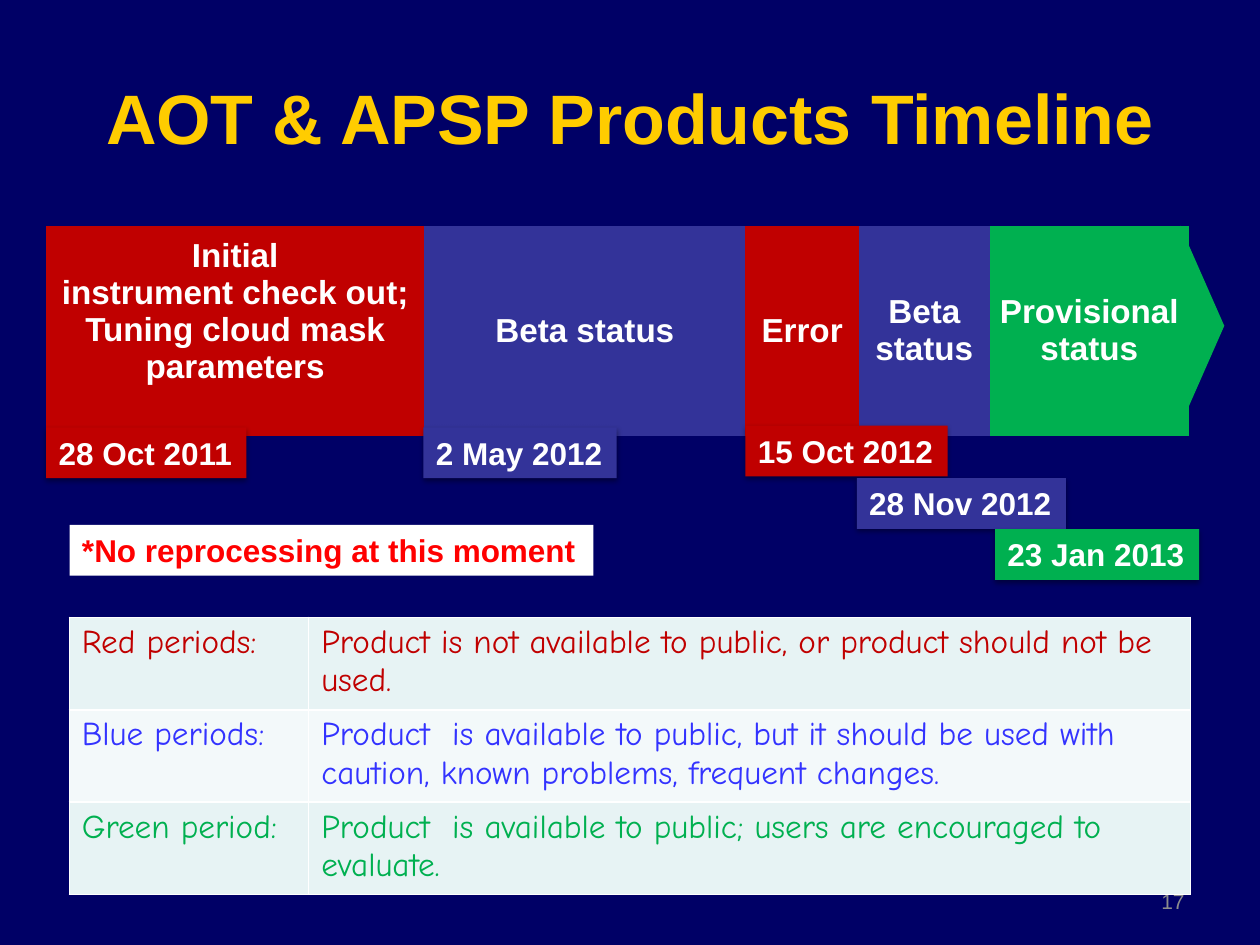
"""Builds the products timeline slide."""
from dataclasses import dataclass

from lxml.etree import SubElement
from pptx import Presentation
from pptx.dml.color import RGBColor
from pptx.enum.shapes import MSO_SHAPE
from pptx.enum.text import MSO_ANCHOR, PP_ALIGN
from pptx.oxml.ns import qn
from pptx.util import Pt


@dataclass(frozen=True)
class Theme:
    """Colours, fonts and type sizes of the slide."""
    navy: str = "000066"
    gold: str = "FFCC00"
    white: str = "FFFFFF"
    grey: str = "8C8C8C"
    red: str = "C00000"
    bright_red: str = "FF0000"
    indigo: str = "333399"
    blue: str = "3333FF"
    green: str = "00B050"
    tint: str = "E7F3F4"
    pale_tint: str = "F3F9FA"
    sans: str = "Arial"
    hand: str = "Comic Neue"
    title: int = 40
    body: int = 19
    label: int = 18
    number: int = 12


@dataclass(frozen=True)
class Box:
    """A region of the page, in points."""
    left: float
    top: float
    width: float
    height: float

    def lengths(self):
        """Return left, top, width and height as lengths."""
        return [Pt(value) for value in (self.left, self.top, self.width, self.height)]


@dataclass(frozen=True)
class Period:
    """One span of the timeline, with its date flag placed from the bar's corner."""
    text: str
    width: float
    fill: str
    date: str
    flag_left: float
    flag_top: float
    flag_width: float


THEME = Theme()
FLAG_HEIGHT = 29
PERIODS = [
    Period("Initial\ninstrument check out;\nTuning cloud mask parameters", 216, THEME.red,
           "28 Oct 2011", 0, 115.2, 114.5),
    Period("Beta status", 183.6, THEME.indigo, "2 May 2012", 215.6, 115.2, 110.4),
    Period("Error", 64.8, THEME.red, "15 Oct 2012", 399.6, 114.2, 115.5),
    Period("Beta status", 74.8, THEME.indigo, "28 Nov 2012", 463.2, 144.2, 119.5),
    Period("Provisional status", 113.8, THEME.green, "23 Jan 2013", 542.2, 173.4, 116.6),
]
LEGEND = [
    ("Red periods:", "Product is not available to public, or product should not be used.",
     THEME.red, THEME.tint),
    ("Blue periods:", "Product  is available to public, but it should be used with caution, "
     "known problems, frequent changes.", THEME.blue, THEME.pale_tint),
    ("Green period:", "Product  is available to public; users are encouraged to evaluate.",
     THEME.green, THEME.tint),
]


def paint(target, colour):
    """Fill a shape, cell or background with one colour."""
    target.fill.solid()
    target.fill.fore_color.rgb = RGBColor.from_string(colour)


def write(frame, text, size, colour, bold=True, align=PP_ALIGN.LEFT, font=THEME.sans):
    """Write the text, one paragraph a line, in a single style."""
    frame.text = text
    for para in frame.paragraphs:
        para.alignment = align
        para.font.name = font
        para.font.size = Pt(size)
        para.font.bold = bold
        para.font.color.rgb = RGBColor.from_string(colour)


def add_text(page, box, text, size, colour, bold, align):
    """Add a wrapped, vertically centred text box."""
    frame = page.shapes.add_textbox(*box.lengths()).text_frame
    frame.word_wrap = True
    frame.vertical_anchor = MSO_ANCHOR.MIDDLE
    write(frame, text, size, colour, bold, align)


def add_shape(page, kind, box, fill):
    """Add a plain filled shape without outline or shadow."""
    shape = page.shapes.add_shape(kind, *box.lengths())
    shape.shadow.inherit = False
    shape.line.fill.background()
    paint(shape, fill)
    return shape


def add_label(page, box, text, fill, colour):
    """Add a filled label holding one line of bold text."""
    label = add_shape(page, MSO_SHAPE.RECTANGLE, box, fill)
    label.text_frame.word_wrap = False
    label.text_frame.vertical_anchor = MSO_ANCHOR.TOP
    write(label.text_frame, text, THEME.label, colour)
    return label


def add_shadow(shape):
    """Give the shape a soft shadow below it."""
    effects = shape._element.spPr.find(qn("a:effectLst"))
    shadow = SubElement(effects, qn("a:outerShdw"), blurRad=str(Pt(3.1)),
                        dist=str(Pt(1.6)), dir="5400000", rotWithShape="0")
    colour = SubElement(shadow, qn("a:srgbClr"), val="000000")
    SubElement(colour, qn("a:alpha"), val="38000")


def add_grid(page, box, rows, widths):
    """Add an unstyled table with equal rows and the given column widths."""
    table = page.shapes.add_table(rows, len(widths), *box.lengths()).table
    table.first_row = table.horz_banding = False
    style = table._tbl.tblPr.find(qn("a:tableStyleId"))
    style.text = "{2D5ABB26-0587-4C30-8999-92F81FD0307C}"
    for column, width in zip(table.columns, widths):
        column.width = Pt(width)
    for row in table.rows:
        row.height = Pt(box.height / rows)
    return table


def add_borders(cell, colour):
    """Draw a one-point border on all sides of the cell."""
    properties = cell._tc.get_or_add_tcPr()
    for index, side in enumerate(("lnL", "lnR", "lnT", "lnB")):
        line = SubElement(properties, qn(f"a:{side}"), w=str(Pt(1)))
        SubElement(SubElement(line, qn("a:solidFill")), qn("a:srgbClr"), val=colour)
        properties.insert(index, line)


def add_timeline(page, box):
    """Add the bar of periods."""
    table = add_grid(page, box, 1, [period.width for period in PERIODS])
    for cell, period in zip(table.rows[0].cells, PERIODS):
        paint(cell, period.fill)
        cell.vertical_anchor = MSO_ANCHOR.MIDDLE
        write(cell.text_frame, period.text, THEME.body, THEME.white, align=PP_ALIGN.CENTER)
    first, last = table.cell(0, 0), table.cell(0, len(PERIODS) - 1)
    first.margin_bottom = Pt(25.4)
    last.margin_left = last.margin_right = last.margin_top = last.margin_bottom = 0


def add_flags(page, box):
    """Add the start date of each period under the bar."""
    for period in PERIODS:
        spot = Box(box.left + period.flag_left, box.top + period.flag_top,
                   period.flag_width, FLAG_HEIGHT)
        add_shadow(add_label(page, spot, period.date, period.fill, THEME.white))


def add_arrow_tip(page, box):
    """Add the triangle that points right from the end of the bar."""
    length, depth = 114.4, 25.2
    middle = box.left + box.width + 7.6
    spot = Box(middle - length / 2, box.top + (length - depth) / 2, length, depth)
    add_shape(page, MSO_SHAPE.ISOSCELES_TRIANGLE, spot, PERIODS[-1].fill).rotation = 90


def add_legend(page, box):
    """Add the table that explains the colours."""
    label_width = 136.8
    table = add_grid(page, box, len(LEGEND), [label_width, box.width - label_width])
    for row, (label, meaning, colour, fill) in zip(table.rows, LEGEND):
        for cell, text in zip(row.cells, (label, meaning)):
            paint(cell, fill)
            add_borders(cell, THEME.white)
            write(cell.text_frame, text, THEME.body, colour, False, font=THEME.hand)


def main():
    """Build the deck and save it."""
    deck = Presentation()
    deck.slide_width, deck.slide_height = Pt(720), Pt(540)
    page = deck.slides.add_slide(deck.slide_layouts[6])
    paint(page.background, THEME.navy)
    bar = Box(26.4, 129, 653, 119.6)
    add_text(page, Box(36, 21.6, 648, 90), "AOT & APSP Products Timeline",
             THEME.title, THEME.gold, True, PP_ALIGN.CENTER)
    add_timeline(page, bar)
    add_text(page, Box(516, 500.6, 168, 28.8), "17", THEME.number, THEME.grey,
             False, PP_ALIGN.RIGHT)
    add_flags(page, bar)
    add_legend(page, Box(39.6, 352.8, 640.8, 158.4))
    add_arrow_tip(page, bar)
    add_label(page, Box(39.8, 300, 299.4, FLAG_HEIGHT), "*No reprocessing at this moment",
              THEME.white, THEME.bright_red)
    deck.save("out.pptx")


if __name__ == "__main__":
    main()
